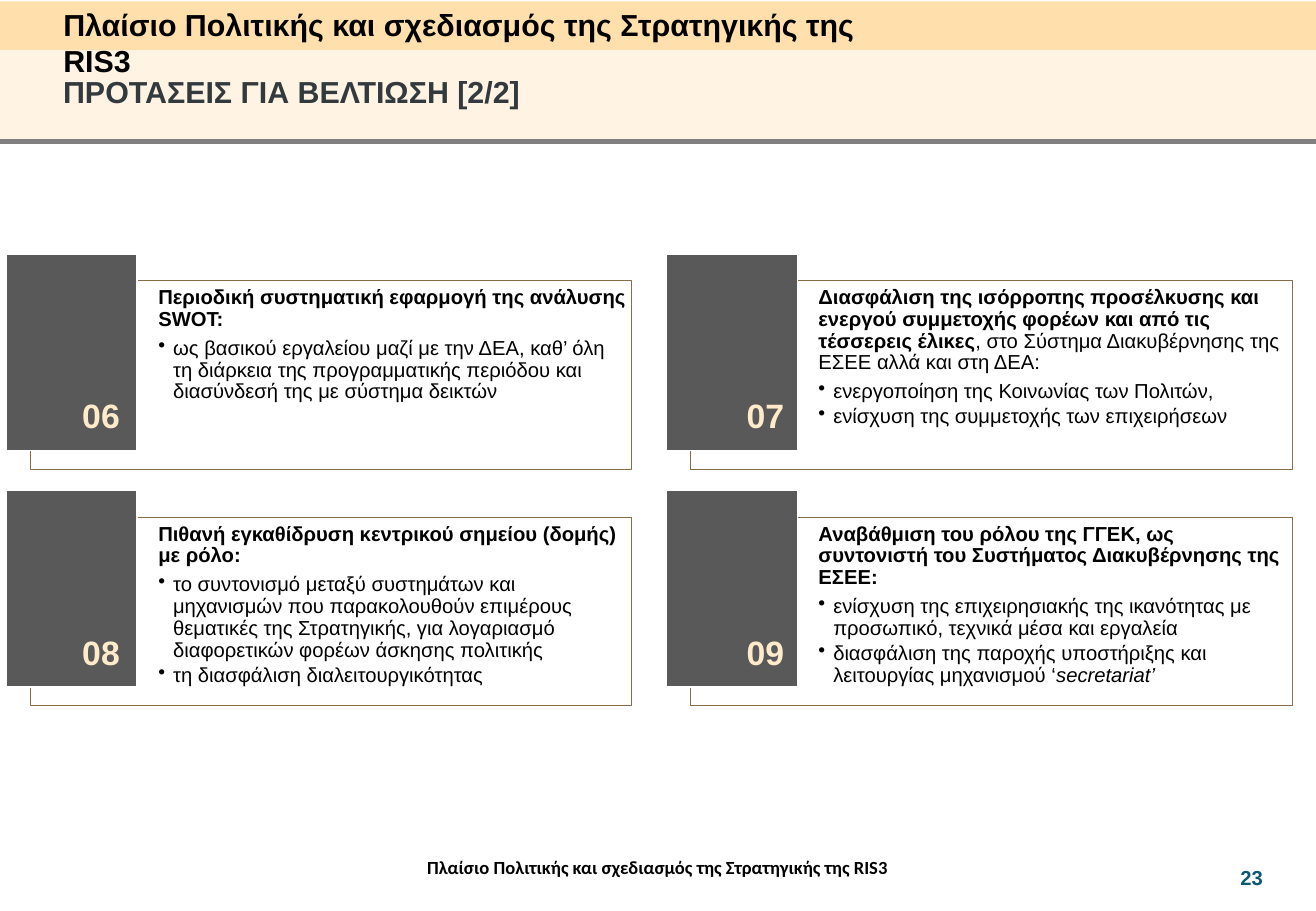
from lxml.etree import SubElement
from pptx import Presentation
from pptx.dml.color import RGBColor
from pptx.enum.shapes import MSO_CONNECTOR, MSO_SHAPE
from pptx.enum.text import MSO_ANCHOR, MSO_AUTO_SIZE, PP_ALIGN
from pptx.oxml.ns import qn
from pptx.util import Cm, Pt

TOPIC = "Πλαίσιο Πολιτικής και σχεδιασμός της Στρατηγικής της RIS3"
COL_PITCH, ROW_PITCH, NUMBER_PITCH = 13.8, 4.95, 13.89
BOLD, ITALIC = {"bold": True}, {"italic": True}

# Each card: number, heading runs, bullets as lists of runs
CARDS = [
    ("06", [("Περιοδική συστηματική εφαρμογή της ανάλυσης SWOT:", BOLD)],
     [[("ως βασικού εργαλείου μαζί με την ΔΕΑ, καθ’ όλη τη διάρκεια της "
        "προγραμματικής περιόδου και διασύνδεσή της με σύστημα δεικτών", {})]]),
    ("07", [("Διασφάλιση της ισόρροπης προσέλκυσης και ενεργού συμμετοχής "
             "φορέων και από τις τέσσερεις έλικες", BOLD),
            (", στο Σύστημα Διακυβέρνησης της ΕΣΕΕ αλλά και στη ΔΕΑ:", {})],
     [[("ενεργοποίηση της Κοινωνίας των Πολιτών,", {})],
      [("ενίσχυση της συμμετοχής των επιχειρήσεων", {})]]),
    ("08", [("Πιθανή εγκαθίδρυση κεντρικού σημείου (δομής) με ρόλο:", BOLD)],
     [[("το συντονισμό μεταξύ συστημάτων και μηχανισμών που παρακολουθούν "
        "επιμέρους θεματικές της Στρατηγικής, για λογαριασμό διαφορετικών "
        "φορέων άσκησης πολιτικής", {})],
      [("τη διασφάλιση διαλειτουργικότητας", {})]]),
    ("09", [("Αναβάθμιση του ρόλου της ΓΓΕΚ, ως συντονιστή του Συστήματος "
             "Διακυβέρνησης της ΕΣΕΕ:", BOLD)],
     [[("ενίσχυση της επιχειρησιακής της ικανότητας με προσωπικό, τεχνικά "
        "μέσα και εργαλεία", {})],
      [("διασφάλιση της παροχής υποστήριξης και λειτουργίας μηχανισμού ‘", {}),
       ("secretariat’", ITALIC)]]),
]


def set_color(color_format, hex_color):
    color_format.rgb = RGBColor.from_string(hex_color)


def set_attrs(obj, values):
    for name, value in values.items():
        setattr(obj, name, value)


def add_run(p, text, size, color="000000", font="Arial", **style):
    r = p.add_run()
    r.text = text
    set_attrs(r.font, {"name": font, "size": Pt(size), "bold": False, **style})
    set_color(r.font.color, color)


def add_rect(s, box, fill, alpha=None, line=None, width=1):
    sp = s.shapes.add_shape(MSO_SHAPE.RECTANGLE, *map(Cm, box))
    sp.shadow.inherit = False
    sp.fill.solid()
    set_color(sp.fill.fore_color, fill)
    if alpha is not None:
        srgb = sp.element.spPr.find(qn("a:solidFill")).find(qn("a:srgbClr"))
        SubElement(srgb, qn("a:alpha")).set("val", str(alpha * 1000))
    if line:
        set_color(sp.line.color, line)
        sp.line.width = Pt(width)
    else:
        sp.line.fill.background()
    return sp


def add_label(s, box, text, size, color, font="Arial", **frame):
    tf = s.shapes.add_textbox(*map(Cm, box)).text_frame
    set_attrs(tf, {"word_wrap": True, **frame})
    add_run(tf.paragraphs[0], text, size, color, font, bold=True)
    return tf.paragraphs[0]


def add_rule(s, y, color, width):
    line = s.shapes.add_connector(MSO_CONNECTOR.STRAIGHT, 0, Cm(y), Cm(27.51), Cm(y))
    set_color(line.line.color, color)
    line.line.width = Pt(width)
    SubElement(line.element.spPr, qn("a:effectLst"))


def place_title(s):
    title = s.shapes.title
    set_attrs(title, dict(zip(("left", "top", "width", "height"),
                              map(Cm, (1.07, 0, 18.54, 1.02)))))
    tf = title.text_frame
    set_attrs(tf, {"word_wrap": True, "auto_size": MSO_AUTO_SIZE.NONE,
                   "vertical_anchor": MSO_ANCHOR.TOP})
    p = tf.paragraphs[0]
    p.alignment = PP_ALIGN.LEFT
    add_run(p, TOPIC, 18, bold=True)
    # Bring the title in front of the header bands
    title.element.getparent().append(title.element)


def fill_paragraph(p, runs, space_after, bullet=False):
    if bullet:
        pPr = p._p.get_or_add_pPr()
        pPr.set("marL", str(Cm(0.31)))
        pPr.set("indent", str(-Cm(0.31)))
        SubElement(pPr, qn("a:buChar")).set("char", "•")
    set_attrs(p, {"alignment": PP_ALIGN.LEFT, "line_spacing": 0.9,
                  "space_after": Pt(space_after)})
    for text, style in runs:
        add_run(p, text, 12, **style)


def add_card(s, col, row, number, heading, bullets):
    x, y = col * COL_PITCH, row * ROW_PITCH
    # Framed text
    card = add_rect(s, (0.64 + x, 5.87 + y, 12.57, 3.94), "FFFFFF", 40, "886B48", 0.5)
    tf = card.text_frame
    set_attrs(tf, {"word_wrap": True, "vertical_anchor": MSO_ANCHOR.TOP,
                   "margin_left": Cm(2.67), "margin_top": Cm(0.13),
                   "margin_right": Cm(0.1), "margin_bottom": Cm(0.13)})
    fill_paragraph(tf.paragraphs[0], heading, 4.2)
    for runs in bullets:
        fill_paragraph(tf.add_paragraph(), runs, 1.8, bullet=True)
    # Number block
    add_rect(s, (0.13 + x, 5.31 + y, 2.74, 4.11), "595959", line="FFFFFF")
    add_label(s, (1.47 + col * NUMBER_PITCH, 8.13 + y, 1.45, 1.12), number, 20, "FFEAC9")


def main():
    prs = Presentation()
    prs.slide_width, prs.slide_height = Cm(27.51), Cm(19.05)
    s = prs.slides.add_slide(prs.slide_layouts[5])

    # Header
    add_rect(s, (0, 0.03, 27.51, 1.02), "FFDFAB")
    add_rect(s, (0, 1.05, 27.51, 1.9), "FFE9CA", 50)
    add_rule(s, 2.95, "808080", 3)
    place_title(s)
    add_label(s, (1.07, 1.4, 10.34, 1.02), "ΠΡΟΤΑΣΕΙΣ ΓΙΑ ΒΕΛΤΙΩΣΗ [2/2]", 18,
              "333A3E", word_wrap=False)

    # Proposals in a two by two grid
    for i, card in enumerate(CARDS):
        add_card(s, i % 2, i // 2, *card)

    # Footer
    margins = dict.fromkeys(("margin_left", "margin_top", "margin_right", "margin_bottom"), 0)
    p = add_label(s, (7.16, 17.91, 13.18, 0.97), TOPIC, 11, "000000", "Calibri", **margins)
    p.alignment = PP_ALIGN.CENTER
    add_label(s, (25.68, 17.98, 1.32, 0.76), "23", 12, "0E5772")

    prs.save("out.pptx")


if __name__ == "__main__":
    main()
